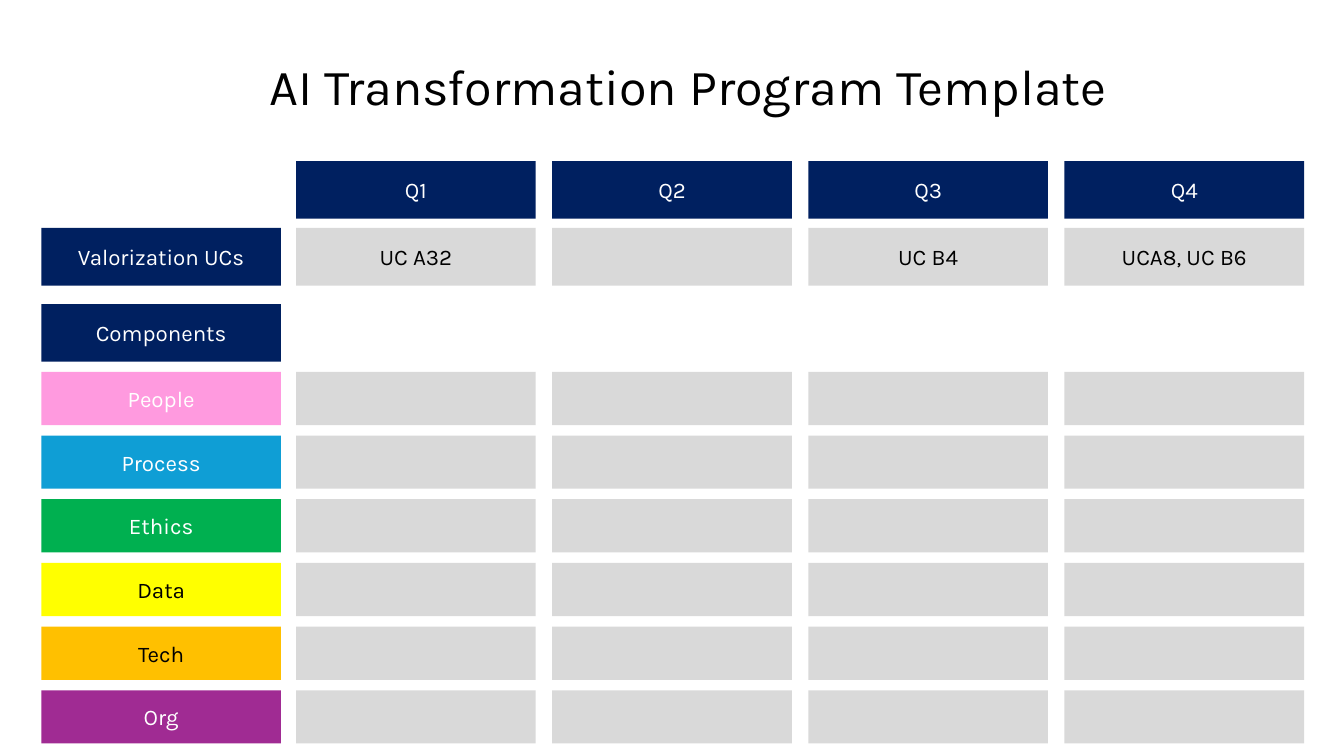
from pptx import Presentation
from pptx.dml.color import RGBColor
from pptx.enum.shapes import MSO_SHAPE
from pptx.enum.text import MSO_ANCHOR, MSO_AUTO_SIZE, PP_ALIGN
from pptx.util import Pt

COLORS = {
    "navy": "002060", "gray": "D9D9D9", "pink": "FF9ADF", "blue": "0F9ED5",
    "green": "00B050", "yellow": "FFFF00", "amber": "FFC000",
    "purple": "A02B93", "white": "FFFFFF", "black": "000000",
}
TITLE_FONT = {"name": "Karla", "size": Pt(36), "bold": False}
CELL_FONT = {"name": "Karla", "size": Pt(16), "bold": False}
TITLE_FRAME = {"word_wrap": True, "auto_size": MSO_AUTO_SIZE.NONE,
               "vertical_anchor": MSO_ANCHOR.TOP}
CELL_FRAME = {"word_wrap": True, "vertical_anchor": MSO_ANCHOR.MIDDLE}

QUARTERS = ["Q1", "Q2", "Q3", "Q4"]
USE_CASES = ["UC A32", "", "UC B4", "UCA8, UC B6"]
COMPONENTS = [
    ("People", "pink", "white"),
    ("Process", "blue", "white"),
    ("Ethics", "green", "white"),
    ("Data", "yellow", "black"),
    ("Tech", "amber", "black"),
    ("Org", "purple", "white"),
]

CELL_WIDTH = 171.2
LABEL_PITCH = 182
QUARTER_PITCH = 182.95
HEADER_HEIGHT = 41.2
COMPONENT_HEIGHT = 38
COMPONENT_PITCH = 45.5


def rgb(color):
    return RGBColor.from_string(COLORS[color])


def apply_format(target, values):
    for attribute, value in values.items():
        setattr(target, attribute, value)


def write_text(frame, wording, color, frame_format, font_format):
    apply_format(frame, frame_format)
    frame.text = wording
    paragraph = frame.paragraphs[0]
    paragraph.alignment = PP_ALIGN.CENTER
    apply_format(paragraph.font, font_format)
    paragraph.font.color.rgb = rgb(color)
    return paragraph


def add_title(slide, box):
    title = slide.shapes.title
    title.left, title.top, title.width, title.height = map(Pt, box)
    heading = write_text(title.text_frame, "AI Transformation Program Template",
                         "black", TITLE_FRAME, TITLE_FONT)
    heading.line_spacing = 0.9


def add_cell(slide, box, wording, fill, color):
    cell = slide.shapes.add_shape(MSO_SHAPE.RECTANGLE, *map(Pt, box))
    cell.shadow.inherit = False
    cell.fill.solid()
    cell.fill.fore_color.rgb = rgb(fill)
    cell.line.fill.background()
    if wording:
        write_text(cell.text_frame, wording, color, CELL_FRAME, CELL_FONT)


def add_quarter_row(slide, box, wordings, fill, color):
    left, top, width, height = box
    for column, wording in enumerate(wordings):
        cell_box = (left + column * QUARTER_PITCH, top, width, height)
        add_cell(slide, cell_box, wording, fill, color)


def add_use_cases(slide, box):
    left, top, width, height = box
    quarters_left = left + LABEL_PITCH
    add_quarter_row(slide, (quarters_left, top, width, height),
                    QUARTERS, "navy", "white")
    use_case_top = top + 47.7
    add_cell(slide, (left, use_case_top, width, height),
             "Valorization UCs", "navy", "white")
    add_quarter_row(slide, (quarters_left, use_case_top, width, height),
                    USE_CASES, "gray", "black")


def add_components(slide, box):
    left, top, width, height = box
    add_cell(slide, (left, top, width, HEADER_HEIGHT),
             "Components", "navy", "white")
    for row, (component, fill, color) in enumerate(COMPONENTS):
        row_top = top + 48.4 + row * COMPONENT_PITCH
        add_cell(slide, (left, row_top, width, height), component, fill, color)
        add_quarter_row(slide, (left + LABEL_PITCH, row_top, width, height),
                        [""] * len(QUARTERS), "gray", "black")


def main():
    presentation = Presentation()
    presentation.slide_width = Pt(960)
    presentation.slide_height = Pt(540)
    slide = presentation.slides.add_slide(presentation.slide_layouts[5])
    add_title(slide, (77.8, 41, 828, 104.4))
    add_use_cases(slide, (29.5, 115.1, CELL_WIDTH, HEADER_HEIGHT))
    add_components(slide, (29.5, 217.2, CELL_WIDTH, COMPONENT_HEIGHT))
    presentation.save("out.pptx")


if __name__ == "__main__":
    main()
